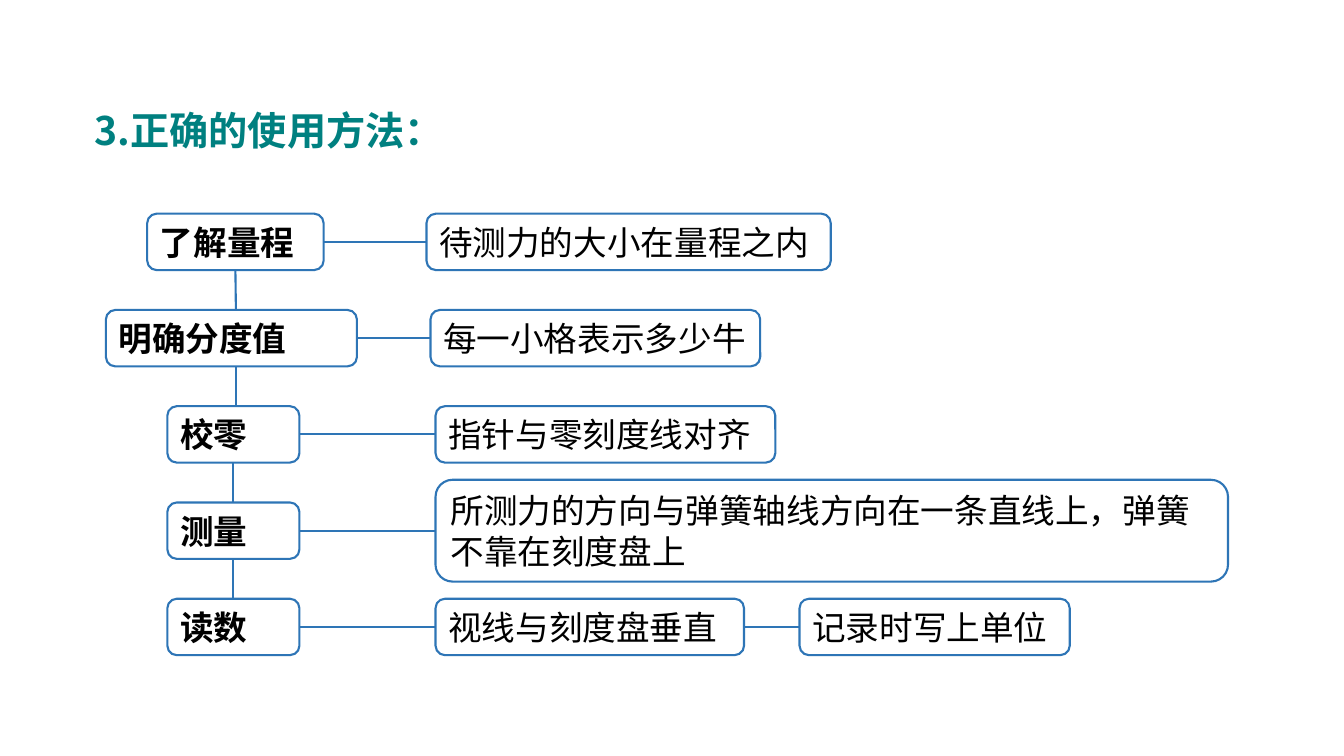
from lxml import etree
from pptx import Presentation
from pptx import util as u
from pptx.dml.color import RGBColor
from pptx.enum import shapes, text
from pptx.oxml.ns import qn

HUES = {"line": "2E75B6", "ink": "000000", "title": "008080"}
FONT = "Noto Sans CJK SC"
TOP, PITCH, TALL = 2.12, 0.955, 0.56  # row grid, in inches
TWO = 1.01                            # height of a two-line box

deck = Presentation()
deck.slide_width, deck.slide_height = u.Inches(13.33), u.Inches(7.5)
slide = deck.slides.add_slide(deck.slide_layouts[6])


def write(shape, words, size, hue, bold, wrap=True, align=text.PP_ALIGN.LEFT):
    frame = shape.text_frame
    frame.word_wrap = wrap
    frame.auto_size = text.MSO_AUTO_SIZE.SHAPE_TO_FIT_TEXT
    para = frame.paragraphs[0]
    para.alignment = align
    run = para.add_run()
    run.text = words
    font = run.font
    font.name, font.size, font.bold = FONT, u.Pt(size), bold
    font.color.rgb = RGBColor.from_string(HUES[hue])
    east = etree.SubElement(run._r.get_or_add_rPr(), qn("a:ea"))
    east.set("typeface", FONT)


def link(x1, y1, x2, y2, start=None, end=None):
    wire = slide.shapes.add_connector(
        shapes.MSO_CONNECTOR.STRAIGHT, *map(u.Inches, (x1, y1, x2, y2)))
    wire.line.color.rgb = RGBColor.from_string(HUES["line"])
    wire.line.width = u.Pt(1.5)
    etree.SubElement(wire._element.spPr, qn("a:effectLst"))
    if start:
        wire.begin_connect(*start)
    if end:
        wire.end_connect(*end)


# Title
title = slide.shapes.add_textbox(*map(u.Inches, (0.84, 1.01, 3.7, 0.57)))
write(title, "3.正确的使用方法：", 28, "title", True, wrap=False)

# Each row: boxes as (left, width, height, words), the step first
rows = [
    [(1.46, 1.75, TALL, "了解量程"), (4.23, 4.01, TALL, "待测力的大小在量程之内")],
    [(1.05, 2.49, TALL, "明确分度值"), (4.27, 3.27, TALL, "每一小格表示多少牛")],
    [(1.66, 1.31, TALL, "校零"), (4.32, 3.37, TALL, "指针与零刻度线对齐")],
    [(1.66, 1.31, TALL, "测量"),
     (4.32, 7.86, TWO, "所测力的方向与弹簧轴线方向在一条直线上，弹簧不靠在刻度盘上")],
    [(1.66, 1.31, TALL, "读数"), (4.32, 3.06, TALL, "视线与刻度盘垂直"),
     (7.93, 2.68, TALL, "记录时写上单位")],
]

# Boxes, centred on their row, and the links along it
steps = []
for i, row in enumerate(rows):
    mid = TOP + i * PITCH + TALL / 2
    last = None
    for j, (left, wide, tall, words) in enumerate(row):
        box = slide.shapes.add_shape(
            shapes.MSO_SHAPE.ROUNDED_RECTANGLE,
            *map(u.Inches, (left, mid - tall / 2, wide, tall)))
        box.shadow.inherit = False
        box.fill.background()
        box.line.color.rgb = RGBColor.from_string(HUES["line"])
        box.line.width = u.Pt(1.5)
        box.text_frame.vertical_anchor = text.MSO_ANCHOR.MIDDLE
        side = text.PP_ALIGN.LEFT if j else text.PP_ALIGN.JUSTIFY
        write(box, words, 24, "ink", j == 0, align=side)
        if j:
            link(edge, mid, left, mid, (last, 3), (box, 1))
        else:
            steps.append(box)
        last, edge = box, left + wide

# Links down the steps; the wide second box is off the axis, so not joined
for i, x in enumerate([2.34, 2.34, 2.32, 2.32]):
    foot = TOP + i * PITCH + TALL
    start = None if i == 1 else (steps[i], 2)
    end = None if i == 0 else (steps[i + 1], 0)
    if i == 1:
        end = None
    link(x, foot, x, TOP + (i + 1) * PITCH, start, end)

deck.save("out.pptx")
